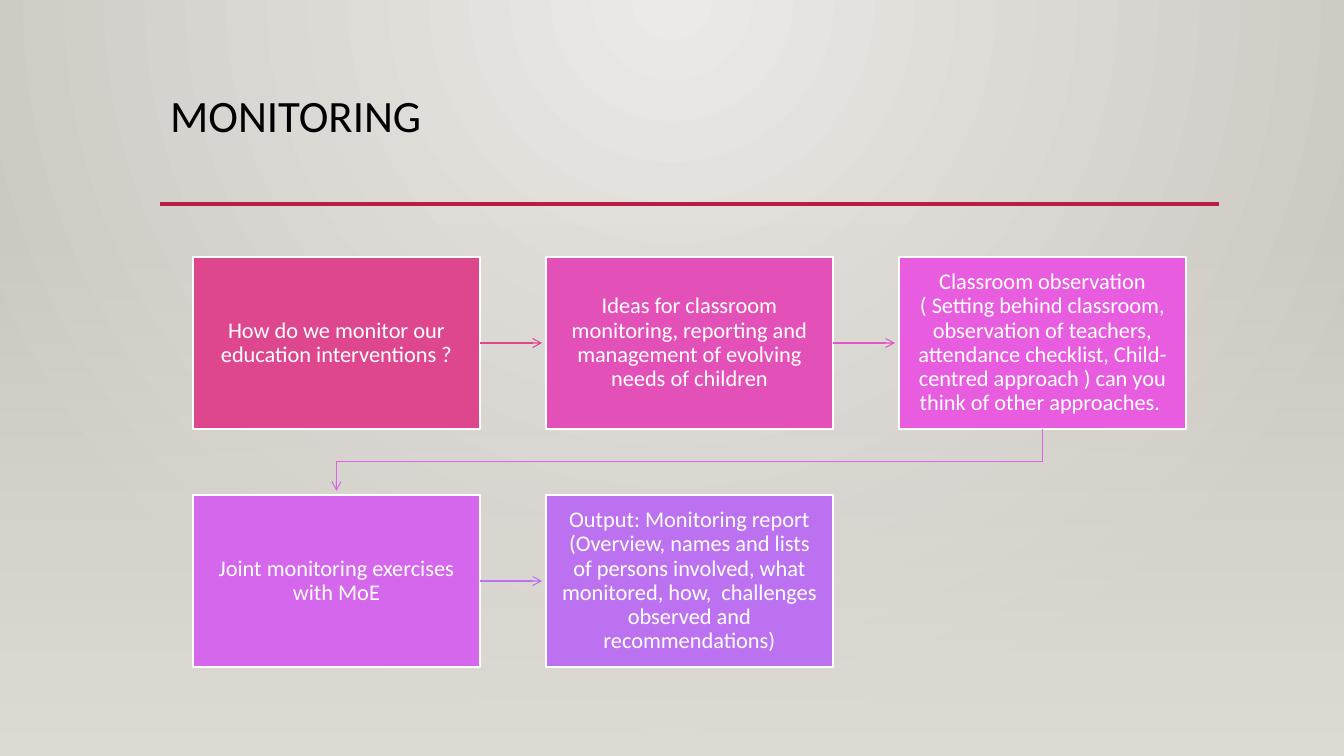
import pptx
import pptx.util
import pptx.dml.color
import pptx.enum.shapes
import pptx.enum.text
import pptx.oxml.ns
from lxml import etree

RGB = pptx.dml.color.RGBColor
BLACK = RGB(0x00, 0x00, 0x00)
WHITE = RGB(0xFF, 0xFF, 0xFF)
CRIMSON = RGB(0xB7, 0x1E, 0x42)
PALE = RGB(0xEC, 0xEA, 0xE7)
GREY = RGB(0xCA, 0xC7, 0xC1)
SAND = RGB(0xDF, 0xDB, 0xD5)
ROSE = RGB(0xDE, 0x47, 0x8E)
PINK = RGB(0xE3, 0x51, 0xB8)
ORCHID = RGB(0xE8, 0x5C, 0xE0)
MAUVE = RGB(0xD4, 0x67, 0xEC)
VIOLET = RGB(0xBC, 0x72, 0xF0)
PINK_ARROW = RGB(0xE5, 0x55, 0xC6)
ORCHID_ARROW = RGB(0xDD, 0x63, 0xEB)

FONT = "Calibri"
SLIDE_W, SLIDE_H = 1344, 756
qn = pptx.oxml.ns.qn


def px(length):
    return pptx.util.Emu(round(length * 914400 / 100.8))


def style_line(line, color, width, arrow=False):
    line.color.rgb = color
    line.width = pptx.util.Pt(width)
    if arrow:
        etree.SubElement(line.color._xFill.getparent(), qn("a:tailEnd"), type="arrow")


deck = pptx.Presentation()
deck.slide_width, deck.slide_height = px(SLIDE_W), px(SLIDE_H)
slide = deck.slides.add_slide(deck.slide_layouts[5])
shapes = slide.shapes

# Background: a circular glow from the top centre
glow = slide.background.fill
glow.gradient()
for stop, color in zip(glow.gradient_stops, (PALE, GREY)):
    stop.color.rgb = color
linear = next(slide.background._cSld.iter(qn("a:lin")))
circle = etree.Element(qn("a:path"), path="circle")
etree.SubElement(circle, qn("a:fillToRect"), l="43000", t="0", r="43000", b="100000")
linear.getparent().replace(linear, circle)

# Veil that fades in towards the bottom
veil = shapes.add_shape(pptx.enum.shapes.MSO_SHAPE.RECTANGLE,
                        px(0), px(223), px(SLIDE_W), px(SLIDE_H - 223))
veil.shadow.inherit = False
veil.line.fill.background()
veil.fill.gradient()
veil.fill.gradient_angle = 270
for stop in veil.fill.gradient_stops:
    stop.color.rgb = SAND
first_color = next(veil._element.iter(qn("a:srgbClr")))
etree.SubElement(first_color, qn("a:alpha"), val="0")

# Title and the rule below it
title = shapes.title
title.left, title.top, title.width, title.height = px(160), px(89), px(1058), px(116)
title.text_frame.text = "MONITORING"
title.text_frame.vertical_anchor = pptx.enum.text.MSO_ANCHOR.TOP
heading = title.text_frame.paragraphs[0]
heading.alignment = pptx.enum.text.PP_ALIGN.LEFT
heading.line_spacing = 0.9
heading.font.name = FONT
heading.font.size = pptx.util.Pt(32)
heading.font.color.rgb = BLACK

STRAIGHT = pptx.enum.shapes.MSO_CONNECTOR.STRAIGHT
rule = shapes.add_connector(STRAIGHT, px(160), px(204), px(1219), px(204))
style_line(rule.line, CRIMSON, 2.5)
etree.SubElement(rule._element.spPr, qn("a:effectLst"))

# Steps, three to a row
LEFT, TOP, STEP_W, STEP_H = 193, 257, 287, 172
PITCH_X, PITCH_Y, COLUMNS = 353, 238, 3
ARROW_GAP = 4
STEPS = [
    ("How do we monitor our education interventions ?", ROSE),
    ("Ideas for classroom monitoring, reporting and management of evolving "
     "needs of children", PINK),
    ("Classroom observation ( Setting behind classroom, observation of teachers, "
     "attendance checklist, Child-centred approach ) can you think of other "
     "approaches. ", ORCHID),
    ("Joint monitoring exercises with MoE", MAUVE),
    ("Output: Monitoring report (Overview, names and lists of persons involved, "
     "what monitored, how,  challenges observed and recommendations)", VIOLET),
]
steps = []
for index, (wording, color) in enumerate(STEPS):
    row, column = divmod(index, COLUMNS)
    step = shapes.add_shape(pptx.enum.shapes.MSO_SHAPE.RECTANGLE,
                            px(LEFT + column * PITCH_X), px(TOP + row * PITCH_Y),
                            px(STEP_W), px(STEP_H))
    step.shadow.inherit = False
    step.fill.solid()
    step.fill.fore_color.rgb = color
    style_line(step.line, WHITE, 1.25)
    frame = step.text_frame
    frame.text = wording
    frame.word_wrap = True
    frame.vertical_anchor = pptx.enum.text.MSO_ANCHOR.MIDDLE
    frame.margin_left = frame.margin_right = px(12)
    frame.margin_top = frame.margin_bottom = px(12)
    paragraph = frame.paragraphs[0]
    paragraph.alignment = pptx.enum.text.PP_ALIGN.CENTER
    paragraph.line_spacing = 0.9
    paragraph.font.name = FONT
    paragraph.font.size = pptx.util.Pt(16)
    paragraph.font.color.rgb = WHITE
    steps.append(step)

# Arrows along the rows
for index, color in ((0, ROSE), (1, PINK_ARROW), (3, VIOLET)):
    step, following = steps[index], steps[index + 1]
    middle = step.top + step.height // 2
    arrow = shapes.add_connector(STRAIGHT, step.left + step.width, middle,
                                 following.left - px(ARROW_GAP), middle)
    arrow.begin_connect(step, 3)
    style_line(arrow.line, color, 0.75, arrow=True)
    etree.SubElement(arrow._element.spPr, qn("a:effectLst"))

# Bent arrow from the end of the first row to the start of the second
start_x = LEFT + 2 * PITCH_X + STEP_W / 2
end_x = LEFT + STEP_W / 2
row_end, next_row = TOP + STEP_H, TOP + PITCH_Y
turn_y = (row_end + next_row) / 2
bend = shapes.build_freeform(px(start_x), px(row_end))
bend.add_line_segments([(px(start_x), px(turn_y)), (px(end_x), px(turn_y)),
                        (px(end_x), px(next_row - ARROW_GAP))], close=False)
row_change = bend.convert_to_shape()
row_change.shadow.inherit = False
row_change.fill.background()
style_line(row_change.line, ORCHID_ARROW, 0.75, arrow=True)

deck.save("out.pptx")
